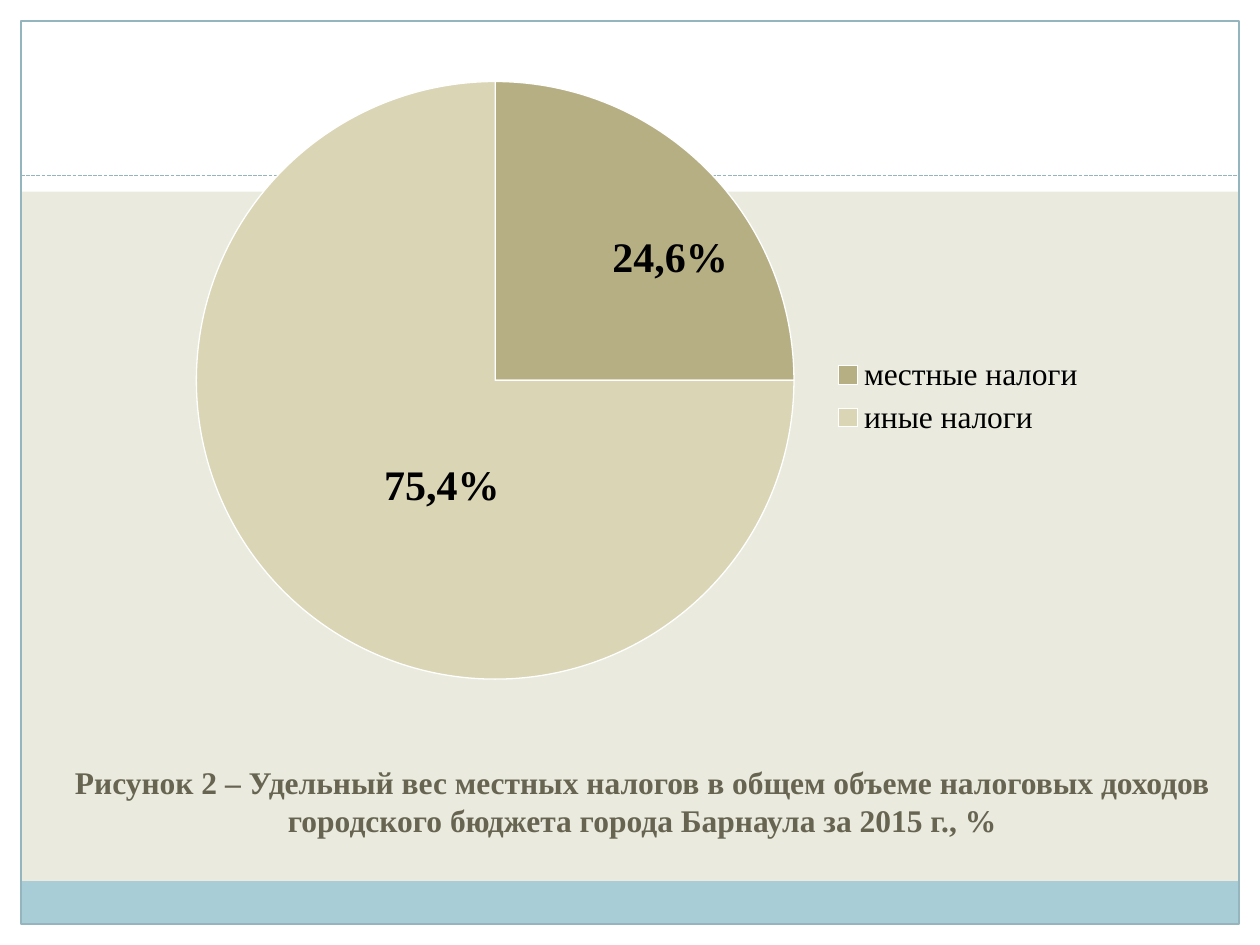
from lxml import etree
from pptx import Presentation
from pptx.chart.data import CategoryChartData
from pptx.dml.color import RGBColor
from pptx.enum.chart import XL_CHART_TYPE as ChartType, XL_LEGEND_POSITION as LegendPosition
from pptx.enum.dml import MSO_LINE as Dash
from pptx.enum.shapes import MSO_CONNECTOR as Connector, MSO_SHAPE as Shape
from pptx.enum.text import MSO_ANCHOR as Anchor, MSO_AUTO_SIZE as AutoSize, PP_ALIGN as Align
from pptx.oxml.ns import qn
from pptx.util import Pt

WIDTH, HEIGHT, MARGIN = 720, 540, 12
BAND_HEIGHT = 24.5
HEADER_HEIGHT = 109.5
FONT = "Times New Roman"
COLORS = {
    "page": "EAEBDE", "white": "FFFFFF", "band": "A8CDD7", "border": "94B5BE",
    "title": "676451", "text": "000000", "local": "B7AF84", "other": "DAD5B5",
}
TAXES = [("местные налоги", 25, "local"), ("иные налоги", 75, "other")]
LABELS = [("24,6%", 342.9, 128.2), ("75,4%", 212.4, 258.5)]
CAPTION = ("Рисунок 2 – Удельный вес местных налогов в общем объеме налоговых доходов "
           "городского бюджета города Барнаула за 2015 г., %")


def color(name):
    return RGBColor.from_string(COLORS[name])


def paint(fill, name):
    fill.solid()
    fill.fore_color.rgb = color(name)


def format_font(font, name, size, bold=False):
    values = {"name": FONT, "size": Pt(size), "bold": bold}
    for key, value in values.items():
        setattr(font, key, value)
    font.color.rgb = color(name)


def add_rectangle(page, left, top, width, height, fill=None, line=None):
    box = page.shapes.add_shape(Shape.RECTANGLE, Pt(left), Pt(top), Pt(width), Pt(height))
    box.shadow.inherit = False
    if fill:
        paint(box.fill, fill)
    else:
        box.fill.background()
    if line:
        box.line.color.rgb = color(line)
        box.line.width = Pt(0.75)
    else:
        box.line.fill.background()


def add_dashed_line(page, top):
    line = page.shapes.add_connector(
        Connector.STRAIGHT, Pt(MARGIN), Pt(top), Pt(WIDTH - MARGIN), Pt(top))
    line.line.color.rgb = color("border")
    line.line.width = Pt(0.75)
    line.line.dash_style = Dash.SQUARE_DOT
    etree.SubElement(line.element.spPr, qn("a:effectLst"))


def add_frame(page):
    inner_width = WIDTH - 2 * MARGIN
    bottom = HEIGHT - MARGIN
    for left, top, width, height in [
        (0, bottom, WIDTH, MARGIN),
        (0, 0, WIDTH, HEADER_HEIGHT),
        (0, 0, MARGIN, HEIGHT),
        (WIDTH - MARGIN, 0, MARGIN, HEIGHT),
    ]:
        add_rectangle(page, left, top, width, height, fill="white")
    add_rectangle(page, MARGIN, bottom - BAND_HEIGHT, inner_width, BAND_HEIGHT, fill="band")
    add_rectangle(page, MARGIN, MARGIN, inner_width, HEIGHT - 2 * MARGIN, line="border")
    add_dashed_line(page, 100.5)


def format_title(page):
    title = page.shapes.title
    title.element.getparent().append(title.element)  # in front of the frame
    places = {"left": 31.2, "top": 423.2, "width": 671.8, "height": 59.8}
    for key, value in places.items():
        setattr(title, key, Pt(value))
    frame = title.text_frame
    frame.text = CAPTION
    settings = {"vertical_anchor": Anchor.BOTTOM, "word_wrap": True, "auto_size": AutoSize.NONE}
    for key, value in settings.items():
        setattr(frame, key, value)
    para = frame.paragraphs[0]
    para.alignment = Align.CENTER
    format_font(para.runs[0].font, "title", 18, bold=True)


def set_layout(element, before, inner=False, **fractions):
    """Place a chart part by fractions of the chart area."""
    for old in element.findall(qn("c:layout")):
        element.remove(old)
    layout = etree.Element(qn("c:layout"))
    manual = etree.SubElement(layout, qn("c:manualLayout"))
    if inner:
        etree.SubElement(manual, qn("c:layoutTarget"), val="inner")
    for axis in "xy":
        etree.SubElement(manual, qn(f"c:{axis}Mode"), val="edge")
    for key, value in fractions.items():
        etree.SubElement(manual, qn(f"c:{key}"), val=str(value))
    element.find(qn(before)).addprevious(layout)


def add_pie(page):
    data = CategoryChartData(number_format="0")
    data.categories = [name for name, _, _ in TAXES]
    data.add_series("Series 1", [value for _, value, _ in TAXES])
    chart = page.shapes.add_chart(
        ChartType.PIE, Pt(25.2), Pt(37.4), Pt(669.6), Pt(360), data).chart
    chart.has_title = False
    format_font(chart.font, "text", 18)
    plot = chart.plots[0]
    plot.vary_by_categories = True
    for index, (_, _, name) in enumerate(TAXES):
        point = plot.series[0].points[index]
        paint(point.format.fill, name)
        point.format.line.color.rgb = color("white")
        point.format.line.width = Pt(0.75)
    chart.has_legend = True
    legend = chart.legend
    legend.position = LegendPosition.RIGHT
    legend.include_in_layout = False
    format_font(legend.font, "text", 18)
    plot_area = chart.element.find(".//" + qn("c:plotArea"))
    set_layout(plot_area, "c:pieChart", inner=True, x=0.13, y=0.02, w=0.51, h=0.96)
    set_layout(chart.element.find(".//" + qn("c:legend")), "c:overlay",
               x=0.66, y=0.45, w=0.24, h=0.15)


def add_label(page, text, left, top):
    box = page.shapes.add_textbox(Pt(left), Pt(top), Pt(81.4), Pt(36))
    frame = box.text_frame
    frame.word_wrap = False
    frame.auto_size = AutoSize.SHAPE_TO_FIT_TEXT
    span = frame.paragraphs[0].add_run()
    span.text = text
    format_font(span.font, "text", 24, bold=True)


def main():
    deck = Presentation()
    deck.slide_width, deck.slide_height = Pt(WIDTH), Pt(HEIGHT)
    page = deck.slides.add_slide(deck.slide_layouts.get_by_name("Title Only"))
    paint(page.background.fill, "page")
    add_frame(page)
    format_title(page)
    add_pie(page)
    for label in LABELS:
        add_label(page, *label)
    deck.save("out.pptx")


if __name__ == "__main__":
    main()
